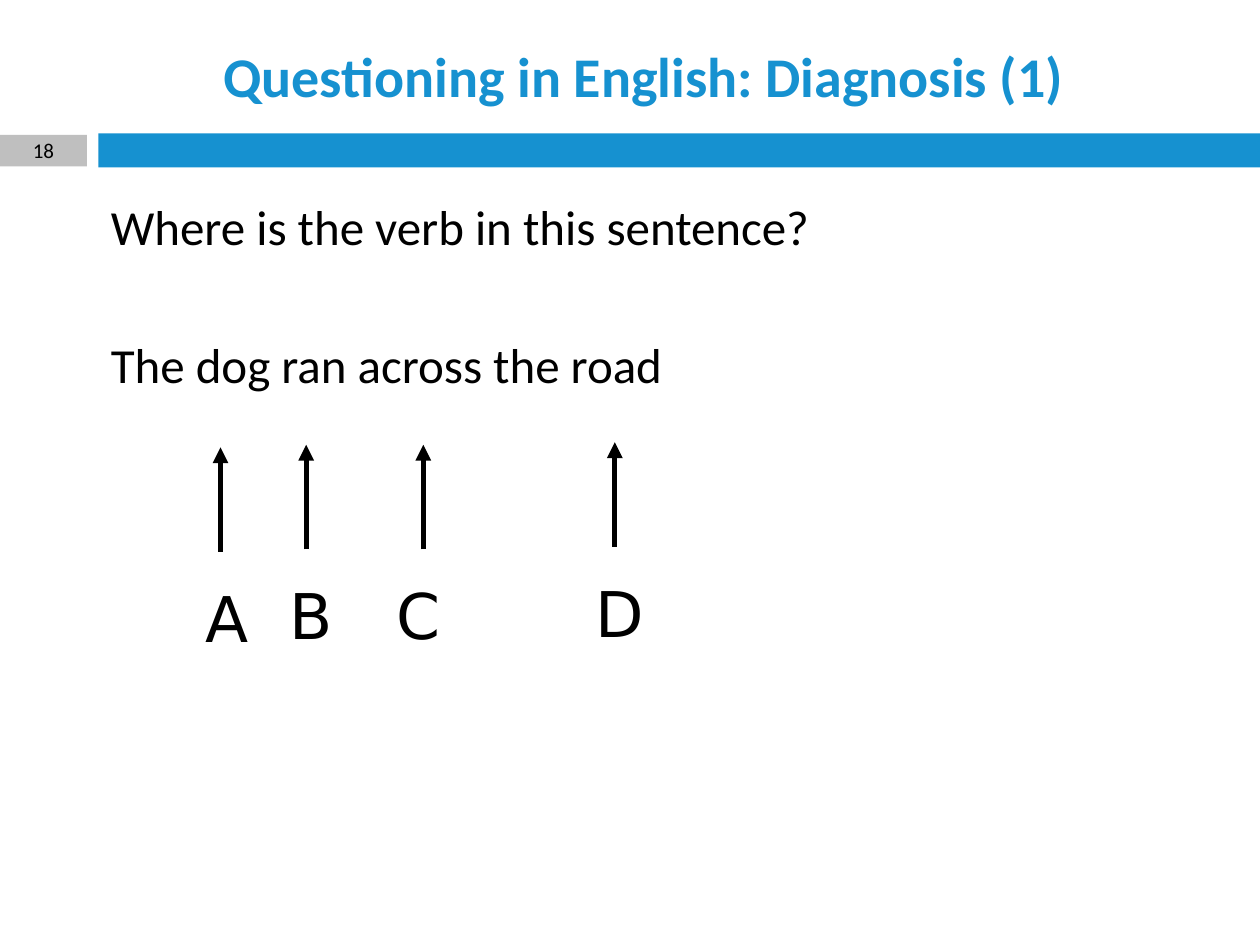
from typing import NamedTuple

from lxml.etree import SubElement
from pptx import Presentation
from pptx.dml.color import RGBColor
from pptx.enum.shapes import MSO_CONNECTOR, MSO_SHAPE
from pptx.enum.text import MSO_ANCHOR as ANCHOR, MSO_AUTO_SIZE, PP_ALIGN as ALIGN
from pptx.oxml.ns import qn
from pptx.util import Inches, Pt

WIDTH, HEIGHT = 10, 7.5
BLUE, GREY, BLACK = "1691D0", "BFBFBF", "000000"
LEFT = 0.78
ARROW_LENGTH = 0.83
LETTER_GAP = 0.17
LETTER_SIZE = (0.92, 0.7)


class Box(NamedTuple):
    left: float
    top: float
    width: float
    height: float

    def emu(self) -> list:
        return [Inches(v) for v in self]


class Marker(NamedTuple):
    """An answer letter and the arrow above it, rising from (x, base)."""
    letter: str
    x: float
    base: float
    letter_left: float


TITLE = Box(LEFT, 0.26, 8.66, 0.68)
BODY = Box(LEFT, 1.51, 8.72, 5.29)
BAR = Box(LEFT, 1.06, WIDTH - LEFT, 0.27)
NUMBER = Box(0, 1.07, 0.69, 0.25)
MARKERS = [
    Marker("A", 1.75, 4.38, 1.34),
    Marker("B", 2.43, 4.36, 2.01),
    Marker("C", 3.36, 4.36, 2.86),
    Marker("D", 4.88, 4.34, 4.46),
]


def rgb(value: str) -> RGBColor:
    return RGBColor.from_string(value)


def place(sp, box: Box) -> None:
    sp.left, sp.top, sp.width, sp.height = box.emu()


def write(sp, *lines: str, size: float, color: str = BLACK, font: str = "Calibri",
          bold: bool = False, align=ALIGN.CENTER, anchor=ANCHOR.MIDDLE,
          gap: float = 0) -> None:
    """Fill a shape with one paragraph per line, gap points apart."""
    tf = sp.text_frame
    tf.word_wrap, tf.auto_size = True, MSO_AUTO_SIZE.NONE
    tf.vertical_anchor = anchor
    for i, line in enumerate(lines):
        p = tf.paragraphs[0] if i == 0 else tf.add_paragraph()
        pPr = p._p.get_or_add_pPr()
        pPr.set("marL", "0")
        pPr.set("indent", "0")
        SubElement(pPr, qn("a:buNone"))
        p.alignment, p.space_before = align, Pt(gap if i else 0)
        r = p.add_run()
        r.text = line
        r.font.name, r.font.size, r.font.bold = font, Pt(size), bold
        r.font.color.rgb = rgb(color)


def add_rect(shapes, box: Box, fill: str):
    sp = shapes.add_shape(MSO_SHAPE.RECTANGLE, *box.emu())
    sp.shadow.inherit = False
    sp.fill.solid()
    sp.fill.fore_color.rgb = rgb(fill)
    sp.line.fill.background()
    return sp


def add_marker(shapes, marker: Marker) -> None:
    group = shapes.add_group_shape().shapes
    x, base = Inches(marker.x), Inches(marker.base)
    arrow = group.add_connector(MSO_CONNECTOR.STRAIGHT, x, base,
                                x, base - Inches(ARROW_LENGTH))
    arrow.line.color.rgb, arrow.line.width = rgb(BLACK), Pt(3)
    SubElement(arrow.line._get_or_add_ln(), qn("a:tailEnd"), type="triangle")
    SubElement(arrow._element.spPr, qn("a:effectLst"))
    box = Box(marker.letter_left, marker.base + LETTER_GAP, *LETTER_SIZE)
    write(group.add_textbox(*box.emu()), marker.letter, size=36,
          font="DejaVu Sans", anchor=ANCHOR.TOP)


def main() -> None:
    prs = Presentation()
    prs.slide_width, prs.slide_height = Inches(WIDTH), Inches(HEIGHT)
    s = prs.slides.add_slide(prs.slide_layouts[1])
    title, body = s.placeholders

    add_rect(s.shapes, BAR, BLUE)
    number = add_rect(s.shapes, NUMBER, GREY)
    write(number, "18", size=12)

    place(title, TITLE)
    write(title, "Questioning in English: Diagnosis (1)", size=32, color=BLUE, bold=True)
    place(body, BODY)
    write(body, "Where is the verb in this sentence?", "The dog ran across the road",
          size=28, align=ALIGN.LEFT, anchor=ANCHOR.TOP, gap=45)

    for marker in MARKERS:
        add_marker(s.shapes, marker)
    prs.save("out.pptx")


if __name__ == "__main__":
    main()
